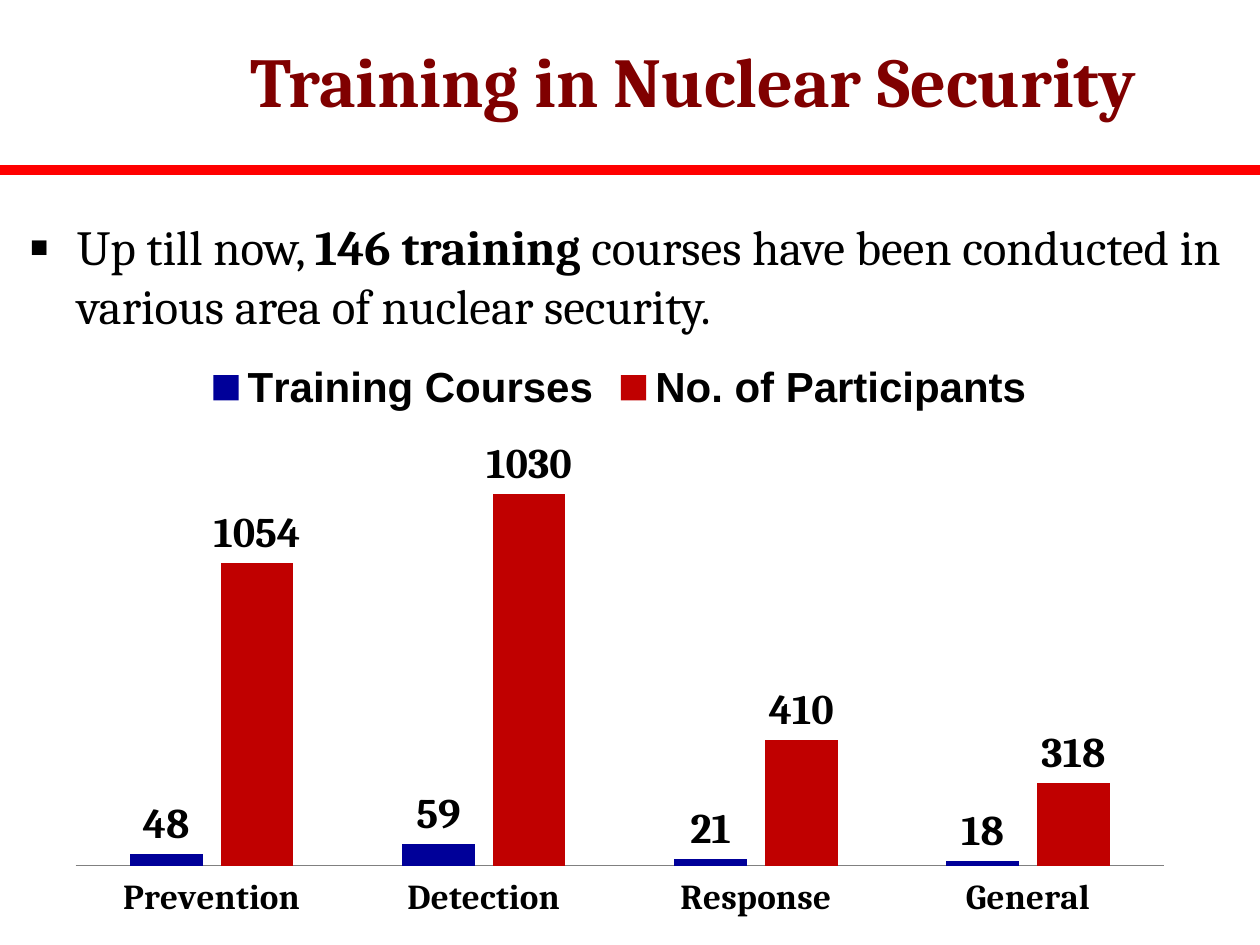
from lxml.etree import SubElement
from pptx import Presentation
from pptx.chart.data import CategoryChartData
from pptx.dml.color import RGBColor
from pptx.enum.chart import (XL_CHART_TYPE, XL_LABEL_POSITION,
                             XL_LEGEND_POSITION, XL_TICK_LABEL_POSITION,
                             XL_TICK_MARK)
from pptx.enum.shapes import MSO_CONNECTOR
from pptx.enum.text import MSO_ANCHOR, MSO_AUTO_SIZE, PP_ALIGN
from pptx.oxml.ns import qn
from pptx.util import Inches, Pt

COLORS = {"title": "800000", "rule": "FF0000", "text": "000000",
          "courses": "000099", "participants": "C00000", "axis": "808080"}
CATEGORIES = ["Prevention", "Detection", "Response", "General"]
# Name, colour, bar heights, labels shown above the bars
SERIES = [
    ("Training Courses", "courses", [28, 50, 15, 10], [48, 59, 21, 18]),
    ("No. of Participants", "participants", [699, 860, 290, 191],
     [1054, 1030, 410, 318]),
]


def rgb(name):
    return RGBColor.from_string(COLORS[name])


def set_font(font, color="text", **values):
    for key, value in {"name": "Cambria", **values}.items():
        setattr(font, key, value)
    font.color.rgb = rgb(color)


def place(sp, left, top, width, height):
    sp.left, sp.top = Inches(left), Inches(top)
    sp.width, sp.height = Inches(width), Inches(height)
    sp.text_frame.auto_size = MSO_AUTO_SIZE.NONE
    sp.text_frame.word_wrap = True


def add_rule(s, top):
    line = s.shapes.add_connector(MSO_CONNECTOR.STRAIGHT, 0, Inches(top),
                                  Inches(10), Inches(top))
    line.line.color.rgb = rgb("rule")
    line.line.width = Pt(6)
    SubElement(line._element.spPr, qn("a:effectLst"))


def fill_title(sp, text):
    place(sp, 1, 0.17, 9, 0.92)
    tf = sp.text_frame
    tf.vertical_anchor = MSO_ANCHOR.MIDDLE
    p = tf.paragraphs[0]
    p.alignment = PP_ALIGN.CENTER
    r = p.add_run()
    r.text = text
    set_font(r.font, "title", size=Pt(40), bold=True)


def fill_bullet(sp, runs):
    place(sp, 0.13, 1.67, 9.75, 5.42)
    p = sp.text_frame.paragraphs[0]
    pPr = p._p.get_or_add_pPr()
    pPr.set("marL", str(Inches(0.38)))
    pPr.set("indent", str(-Inches(0.38)))
    SubElement(pPr, qn("a:buSzPct"), val="120000")
    SubElement(pPr, qn("a:buFont"), typeface="Arial")
    SubElement(pPr, qn("a:buChar"), char="▪")
    p.space_before = p.space_after = Pt(6)
    for text, bold in runs:
        r = p.add_run()
        r.text = text
        set_font(r.font, size=Pt(28), bold=bold)


def set_plot_layout(chart, **fractions):
    plot_area = chart._chartSpace.chart.plotArea
    for old in plot_area.findall(qn("c:layout")):
        plot_area.remove(old)
    layout = plot_area.makeelement(qn("c:layout"))
    plot_area.insert(0, layout)
    manual = SubElement(layout, qn("c:manualLayout"))
    settings = {"layoutTarget": "inner", "xMode": "edge", "yMode": "edge",
                **fractions}
    for tag, value in settings.items():
        SubElement(manual, qn(f"c:{tag}"), val=str(value))


def label_bars(series, labels):
    label_font = {"size": Pt(24), "bold": True}
    dls = series.data_labels
    dls.show_value = True
    dls.position = XL_LABEL_POSITION.OUTSIDE_END
    set_font(dls.font, **label_font)
    for i, value in enumerate(labels):
        dl = series.points[i].data_label
        r = dl.text_frame.paragraphs[0].add_run()
        r.text = str(value)
        set_font(r.font, **label_font)
        dl.position = XL_LABEL_POSITION.OUTSIDE_END


def add_training_chart(s):
    data = CategoryChartData()
    data.categories = CATEGORIES
    for name, _, values, _ in SERIES:
        data.add_series(name, values)
    chart = s.shapes.add_chart(XL_CHART_TYPE.COLUMN_CLUSTERED, Inches(0.42),
                               Inches(2.75), Inches(9), Inches(4.58),
                               data).chart
    chart.has_title = False
    set_font(chart.font, name="Arial", size=Pt(10))
    set_plot_layout(chart, x=0.02, y=0.15, w=0.96, h=0.75)

    # Bars and their labels
    plot = chart.plots[0]
    plot.vary_by_categories = False
    plot.gap_width, plot.overlap = 150, -25
    for series, (_, color, _, labels) in zip(plot.series, SERIES):
        series.format.fill.solid()
        series.format.fill.fore_color.rgb = rgb(color)
        label_bars(series, labels)

    # Axes
    axis = chart.category_axis
    axis.major_tick_mark = XL_TICK_MARK.NONE
    axis.tick_label_position = XL_TICK_LABEL_POSITION.LOW
    axis.format.line.color.rgb = rgb("axis")
    set_font(axis.tick_labels.font, size=Pt(20), bold=True)
    values = chart.value_axis
    values.minimum_scale, values.maximum_scale = 0, 1000
    values.has_major_gridlines = False
    values.visible = False

    # Legend
    chart.has_legend = True
    chart.legend.position = XL_LEGEND_POSITION.TOP
    chart.legend.include_in_layout = False
    set_font(chart.legend.font, name="Arial", size=Pt(24), bold=True)


def main():
    prs = Presentation()
    prs.slide_width, prs.slide_height = Inches(10), Inches(7.5)
    s = prs.slides.add_slide(prs.slide_layouts[1])
    add_rule(s, 1.35)
    fill_title(s.shapes.title, "Training in Nuclear Security")
    fill_bullet(s.placeholders[1], [
        ("Up till now, ", False),
        ("146 training ", True),
        ("courses have been conducted in various area of nuclear security.",
         False),
    ])
    add_training_chart(s)
    prs.save("out.pptx")


if __name__ == "__main__":
    main()
